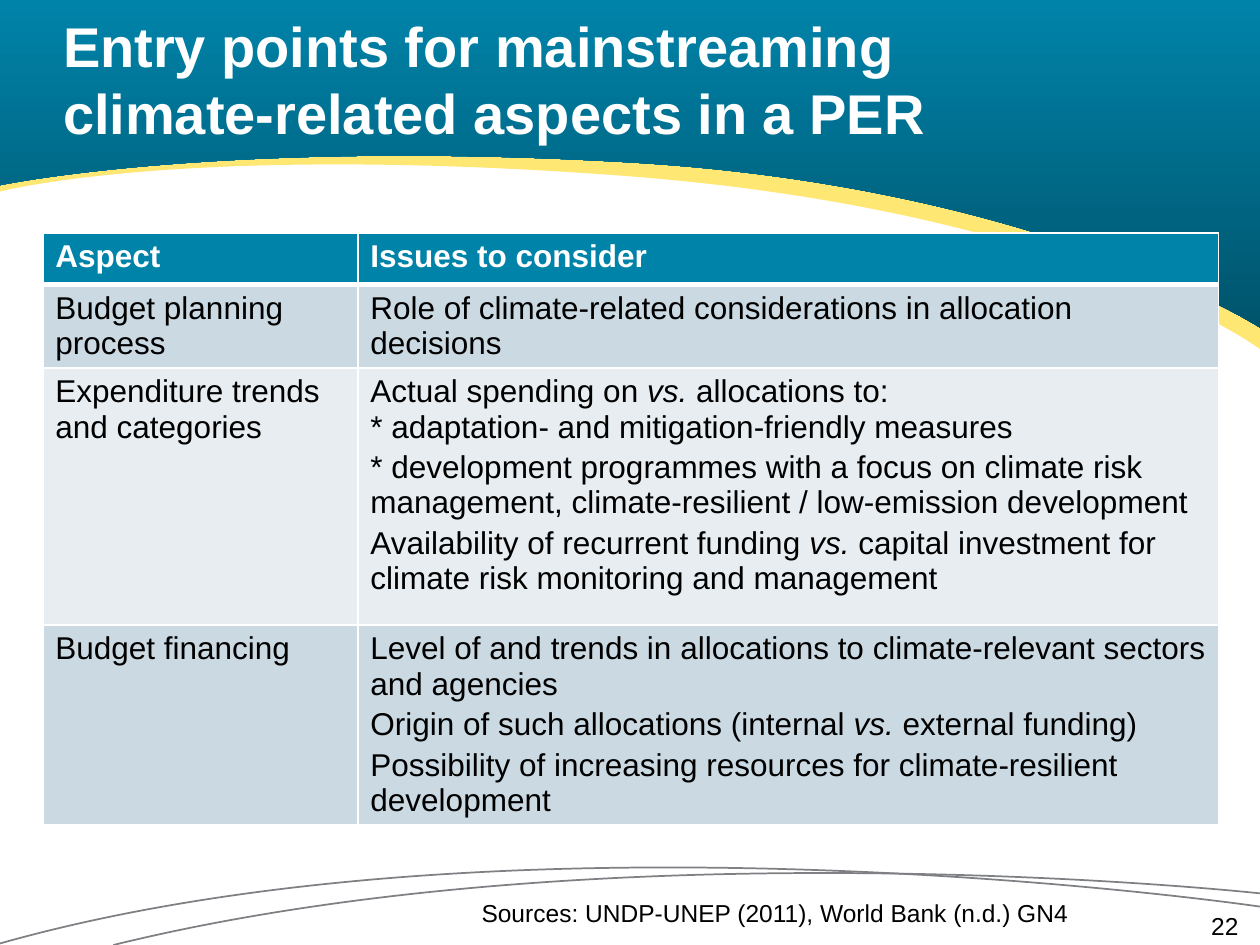
import pptx
import pptx.util
import pptx.dml.color
import pptx.enum.text
import pptx.oxml
import pptx.oxml.ns

Inches = pptx.util.Inches
Pt = pptx.util.Pt
RGBColor = pptx.dml.color.RGBColor
Align = pptx.enum.text.PP_ALIGN
Anchor = pptx.enum.text.MSO_ANCHOR
AutoSize = pptx.enum.text.MSO_AUTO_SIZE
qn = pptx.oxml.ns.qn

WHITE = RGBColor(0xFF, 0xFF, 0xFF)
BLACK = RGBColor(0, 0, 0)
TEAL = RGBColor(0x00, 0x83, 0xA9)
DARK_TEAL = RGBColor(0x00, 0x54, 0x6C)
YELLOW = RGBColor(0xFF, 0xE7, 0x74)
GREY = RGBColor(0x7E, 0x80, 0x83)
BAND_DARK = RGBColor(0xCB, 0xD9, 0xE2)
BAND_LIGHT = RGBColor(0xE7, 0xED, 0xF1)

TITLE = "Entry points for mainstreaming \vclimate-related aspects in a PER"
COLUMN_WIDTHS = (2.5, 6.83)
ROW_HEIGHTS = (0.41, 0.65, 2.04, 1.58)
ROWS = [
    (["Aspect"], ["Issues to consider"]),
    (["Budget planning process"],
     ["Role of climate-related considerations in allocation decisions"]),
    (["Expenditure trends and categories"],
     ["Actual spending on vs. allocations to: \v* adaptation- and mitigation-friendly measures",
      "* development programmes with a focus on climate risk management, "
      "climate-resilient / low-emission development",
      "Availability of recurrent funding vs. capital investment for "
      "climate risk monitoring and management"]),
    (["Budget financing"],
     ["Level of and trends in allocations to climate-relevant sectors and agencies",
      "Origin of such allocations (internal vs. external funding)",
      "Possibility of increasing resources for climate-resilient development"]),
]


def apply(target, settings):
    for name, value in settings.items():
        setattr(target, name, value)


def style_font(font, size, color, **settings):
    apply(font, {"name": "Arial", "size": Pt(size), **settings})
    font.color.rgb = color


def add_curve(shapes, box, start, controls, closed=False):
    left, top, width, height = box

    def place(point):
        return left + int(point[0] * width), top + int(point[1] * height)

    ends = [start] if closed else []
    builder = shapes.build_freeform(*place(start), scale=1.0)
    builder.add_line_segments([place(point) for point in controls + ends], close=closed)
    curve = builder.convert_to_shape()
    curve.shadow.inherit = False
    lines = list(curve.element.iter(qn("a:lnTo")))
    for first in range(0, len(controls), 3):
        cubic = pptx.oxml.parse_xml(f'<a:cubicBezTo {pptx.oxml.ns.nsdecls("a")}/>')
        lines[first].addprevious(cubic)
        for line in lines[first:first + 3]:
            cubic.append(line[0])
            line.getparent().remove(line)
    return curve


def add_footer_arcs(slide, left, top, width, height):
    arcs = [((1, 0.65), (0.485, 0.17), (0.09, 1)),
            ((1, 0.74), (0.41, 0), (0, 0.99))]
    group = slide.shapes.add_group_shape()
    for start, bend, end in arcs:
        arc = add_curve(group.shapes, (left, top, width, height), start, [start, bend, end])
        arc.fill.background()
        arc.line.color.rgb = GREY
        arc.line.width = Pt(1)


def add_header_swoosh(slide, left, top, width, height):
    box = (left, top, width, height)
    corners = [(0, 0)] * 3 + [(1, 0)] * 3
    edge = add_curve(slide.shapes, box, (1, 2.78),
                     [(1, 2.78), (0.854, 1.69), (0.501, 1.41),
                      (0.147, 1.14), (0, 1.53), (0, 1.53)] + corners, closed=True)
    edge.fill.solid()
    edge.fill.fore_color.rgb = YELLOW
    band = add_curve(slide.shapes, box, (1, 2.61),
                     [(1, 2.61), (0.826, 1.49), (0.501, 1.3),
                      (0.175, 1.11), (0, 1.48), (0, 1.48)] + corners, closed=True)
    band.fill.gradient()
    band.fill.gradient_angle = 270
    for stop, color in zip(band.fill.gradient_stops, (TEAL, DARK_TEAL)):
        stop.color.rgb = color
    for swoosh in (edge, band):
        swoosh.line.fill.background()


def add_title(slide, left, top, width, height):
    title = slide.shapes.title
    title.element.getparent().append(title.element)
    apply(title, {"left": left, "top": top, "width": width, "height": height})
    frame = title.text_frame
    apply(frame, {"margin_left": 0, "margin_right": 0, "margin_top": 0, "margin_bottom": 0,
                  "vertical_anchor": Anchor.MIDDLE, "word_wrap": True,
                  "auto_size": AutoSize.NONE, "text": TITLE})
    heading = frame.paragraphs[0]
    heading.alignment = Align.LEFT
    for run in heading.runs:
        style_font(run.font, 32, WHITE, bold=True)


def add_rich_text(paragraph, text, color, bold):
    for index, plain in enumerate(text.split("vs.")):
        if index:
            latin = paragraph.add_run()
            latin.text = "vs."
            style_font(latin.font, 18, color, bold=bold, italic=True)
        for line_index, line in enumerate(plain.split("\v")):
            if line_index:
                paragraph.add_line_break()
            run = paragraph.add_run()
            run.text = line
            style_font(run.font, 18, color, bold=bold, italic=False)


def add_borders(cell, widths):
    properties = cell._tc.get_or_add_tcPr()
    for index, (side, points) in enumerate(widths.items()):
        properties.insert(index, pptx.oxml.parse_xml(
            f'<a:{side} {pptx.oxml.ns.nsdecls("a")} w="{Pt(points)}">'
            f'<a:solidFill><a:srgbClr val="{WHITE}"/></a:solidFill></a:{side}>'))


def fill_cell(cell, paragraphs, row):
    is_header = row == 0
    cell.fill.solid()
    cell.fill.fore_color.rgb = TEAL if is_header else (BAND_LIGHT, BAND_DARK)[row % 2]
    add_borders(cell, {"lnL": 1, "lnR": 1, "lnT": 3 if row == 1 else 1,
                       "lnB": 3 if is_header else 1})
    frame = cell.text_frame
    for index, text in enumerate(paragraphs):
        paragraph = frame.add_paragraph() if index else frame.paragraphs[0]
        if index or row == 2 and len(paragraphs) > 1:
            paragraph.space_before = Pt(3)
        add_rich_text(paragraph, text, WHITE if is_header else BLACK, is_header)


def add_aspects_table(slide, left, top, width, height):
    aspects = slide.shapes.add_table(len(ROWS), len(COLUMN_WIDTHS),
                                     left, top, width, height).table
    for column, column_width in zip(aspects.columns, COLUMN_WIDTHS):
        column.width = Inches(column_width)
    for row, (row_height, contents) in enumerate(zip(ROW_HEIGHTS, ROWS)):
        aspects.rows[row].height = Inches(row_height)
        for column, paragraphs in enumerate(contents):
            fill_cell(aspects.cell(row, column), paragraphs, row)


def add_footer_text(slide, text, left, top, width, height, **frame_settings):
    frame = slide.shapes.add_textbox(left, top, width, height).text_frame
    apply(frame, {"word_wrap": True, "text": text, **frame_settings})
    footer = frame.paragraphs[0]
    footer.alignment = Align.RIGHT
    style_font(footer.runs[0].font, 14, BLACK)


def main():
    deck = pptx.Presentation()
    apply(deck, {"slide_width": Inches(10), "slide_height": Inches(7.5)})
    slide = deck.slides.add_slide(deck.slide_layouts[5])
    add_footer_arcs(slide, Inches(0), Inches(6.33), Inches(10), Inches(1.17))
    add_header_swoosh(slide, Inches(0), Inches(-0.01), Inches(10), Inches(1))
    add_title(slide, Inches(0.5), Inches(0), Inches(9.33), Inches(1.25))
    add_aspects_table(slide, Inches(0.34), Inches(1.85), Inches(9.33), Inches(4.68))
    add_footer_text(slide, "22", Inches(7.5), Inches(7.23), Inches(2.33), Inches(0.18),
                    margin_left=0, margin_right=0, margin_top=0, margin_bottom=0)
    add_footer_text(slide, "Sources: UNDP-UNEP (2011), World Bank (n.d.) GN4",
                    Inches(3.25), Inches(7.08), Inches(5.33), Inches(0.34),
                    auto_size=AutoSize.SHAPE_TO_FIT_TEXT)
    deck.save("out.pptx")


if __name__ == "__main__":
    main()
